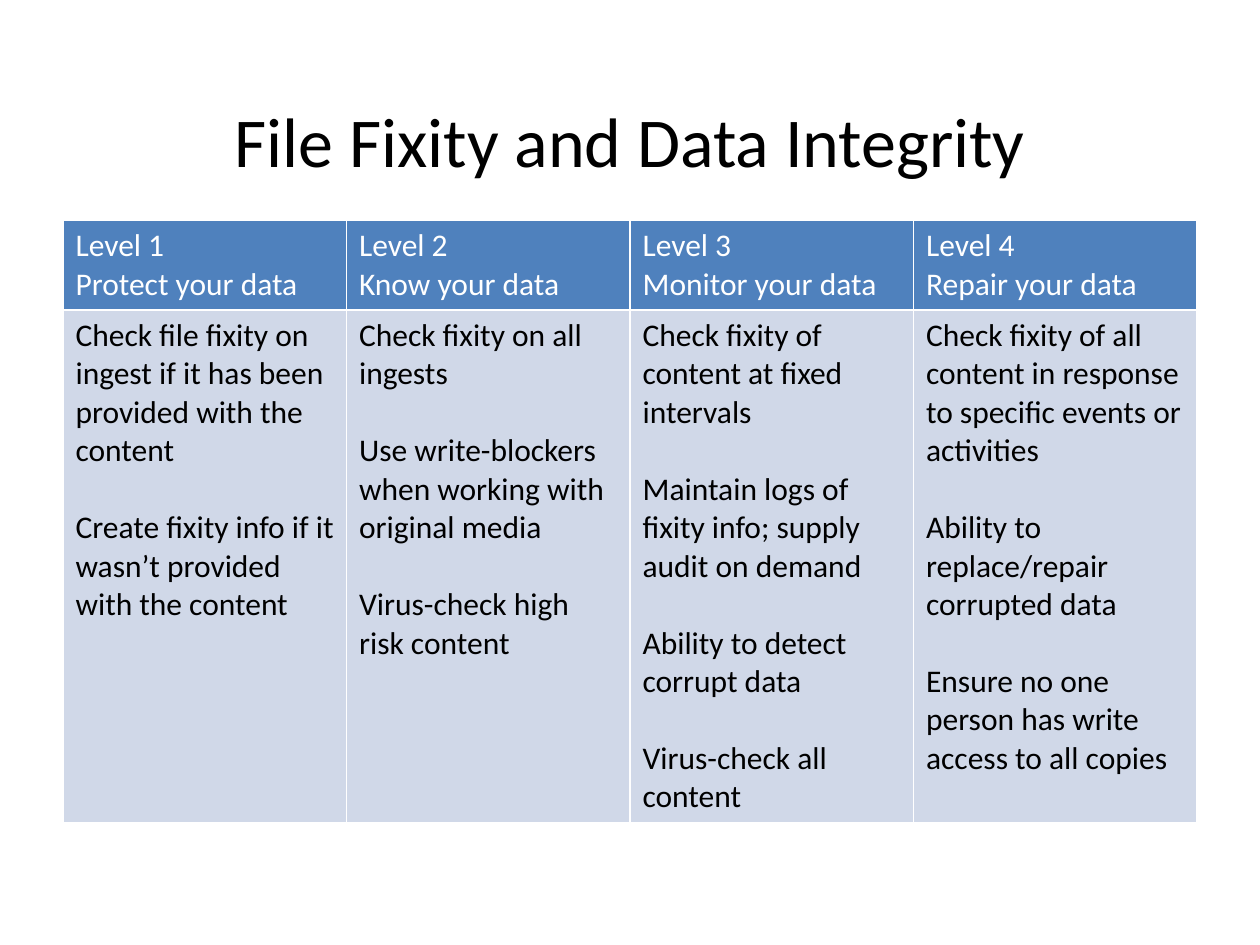
from pptx import Presentation
from pptx.dml.color import RGBColor
from pptx.enum.text import MSO_ANCHOR, PP_ALIGN
from pptx.util import Pt

WHITE = RGBColor(0xFF, 0xFF, 0xFF)
BLACK = RGBColor(0x00, 0x00, 0x00)
HEADER_BLUE = RGBColor(0x4F, 0x81, 0xBD)
BODY_BLUE = RGBColor(0xD0, 0xD8, 0xE8)

LEFT, WIDTH = 36, 648
HEADER_HEIGHT, BODY_HEIGHT = 51, 293
LINE_HEIGHT = 22

LEVELS = [
    (["Level 1", "Protect your data"],
     ["Check file fixity on ingest if it has been provided with the content",
      "Create fixity info if it wasn’t provided with the content"]),
    (["Level 2", "Know your data"],
     ["Check fixity on all ingests",
      "Use write-blockers when working with original media",
      "Virus-check high risk content"]),
    (["Level 3", "Monitor your data"],
     ["Check fixity of content at fixed intervals",
      "Maintain logs of fixity info; supply audit on demand",
      "Ability to detect corrupt data",
      "Virus-check all content"]),
    (["Level 4", "Repair your data"],
     ["Check fixity of all content in response to specific events or activities",
      "Ability to replace/repair corrupted data",
      "Ensure no one person has write access to all copies"]),
]


class SlideBuilder:
    def __init__(self, slide, font_name="Calibri"):
        self.slide = slide
        self.font_name = font_name

    def fill_text(self, text_frame, lines, size, color, gap=0, **paragraph_format):
        """Set one paragraph per line, with gap points between them."""
        text_frame.text = "\n".join(lines)
        font_format = {"name": self.font_name, "size": Pt(size), "bold": False}
        for index, paragraph in enumerate(text_frame.paragraphs):
            paragraph.space_before = Pt(gap if index else 0)
            for name, value in paragraph_format.items():
                setattr(paragraph, name, value)
            font = paragraph.runs[0].font
            for name, value in font_format.items():
                setattr(font, name, value)
            font.color.rgb = color

    def title(self, text, top, height):
        title = self.slide.shapes.title
        position = {"left": LEFT, "top": top, "width": WIDTH, "height": height}
        for name, value in position.items():
            setattr(title, name, Pt(value))
        title.text_frame.vertical_anchor = MSO_ANCHOR.MIDDLE
        self.fill_text(title.text_frame, [text], 40, BLACK, alignment=PP_ALIGN.CENTER)

    def cell(self, cell, lines, fill, color, gap=0):
        cell.fill.solid()
        cell.fill.fore_color.rgb = fill
        self.fill_text(cell.text_frame, lines, 18, color, gap)

    def level_table(self, levels, top):
        table = self.slide.shapes.add_table(
            2, len(levels), Pt(LEFT), Pt(top), Pt(WIDTH),
            Pt(HEADER_HEIGHT + BODY_HEIGHT)).table
        for row, height in zip(table.rows, (HEADER_HEIGHT, BODY_HEIGHT)):
            row.height = Pt(height)
        for column, (heading, requirements) in enumerate(levels):
            self.cell(table.cell(0, column), heading, HEADER_BLUE, WHITE)
            self.cell(table.cell(1, column), requirements, BODY_BLUE, BLACK, LINE_HEIGHT)


def main():
    presentation = Presentation()
    presentation.slide_width, presentation.slide_height = Pt(720), Pt(540)
    title_only = presentation.slide_layouts[5]
    builder = SlideBuilder(presentation.slides.add_slide(title_only))
    builder.title("File Fixity and Data Integrity", top=48, height=63.5)
    builder.level_table(LEVELS, top=126)
    presentation.save("out.pptx")


if __name__ == "__main__":
    main()
